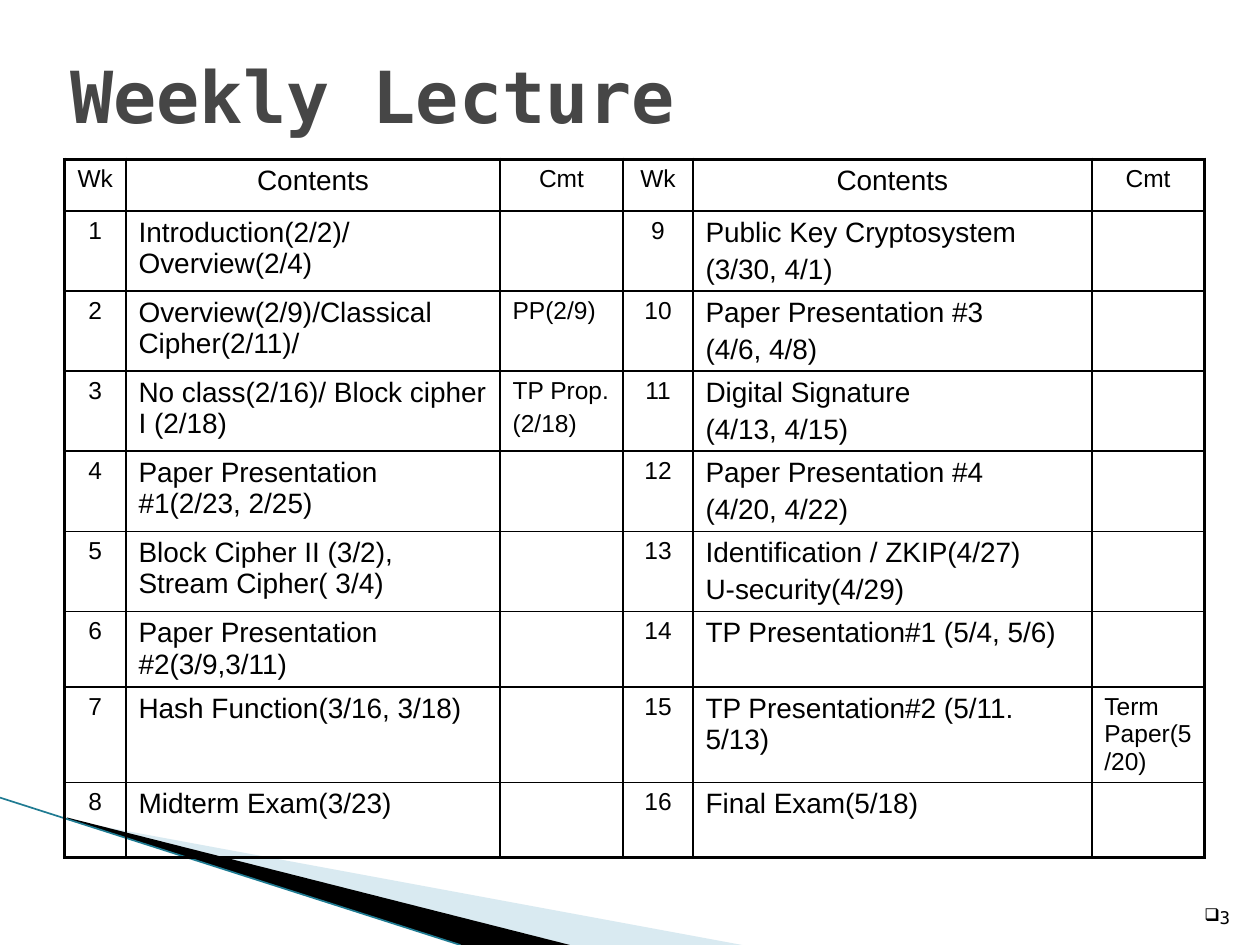
"""Build the weekly lecture schedule slide."""
from dataclasses import dataclass

from lxml.etree import SubElement
from pptx import Presentation
from pptx.dml.color import RGBColor
from pptx.enum.shapes import MSO_CONNECTOR as Connector
from pptx.enum.text import MSO_ANCHOR as Anchor, PP_ALIGN as Align
from pptx.oxml.ns import qn
from pptx.util import Cm, Pt


@dataclass(frozen=True)
class Theme:
    ink: str = "000000"
    heading: str = "464646"
    wedge: str = "A0CBDC"
    stroke: str = "1F7B92"
    body_font: str = "Arial"
    mono_font: str = "DejaVu Sans Mono"
    title_size: int = 41
    content_size: int = 16
    label_size: int = 14
    number_size: int = 10
    outer_border: float = 2.25
    inner_border: float = 1


def format_font(font, color, **values):
    for name, value in values.items():
        setattr(font, name, value)
    font.color.rgb = RGBColor.from_string(color)


def add_label(slide, box, text, anchor, align):
    frame = slide.shapes.add_textbox(*map(Cm, box)).text_frame
    for name, value in {"word_wrap": True, "vertical_anchor": anchor}.items():
        setattr(frame, name, value)
    paragraph = frame.paragraphs[0]
    paragraph.text = text
    paragraph.alignment = align
    return paragraph


theme = Theme()
presentation = Presentation()
presentation.slide_width, presentation.slide_height = Cm(25.4), Cm(19.05)
slide = presentation.slides.add_slide(presentation.slide_layouts[6])

wedges = [
    (theme.wedge, 40, [(1.4, 16.54), (14.96, 19.05), (11.48, 19.05), (1.4, 16.51)]),
    (theme.ink, 100, [(1.35, 16.48), (11.49, 19.05), (9.3, 19.05), (1.37, 16.51)]),
]
for color, opacity, points in wedges:
    start, *others = [(Cm(x), Cm(y)) for x, y in points]
    builder = slide.shapes.build_freeform(*start)
    builder.add_line_segments(others, close=True)
    shape = builder.convert_to_shape()
    shape.shadow.inherit = False
    shape.fill.solid()
    shape.fill.fore_color.rgb = RGBColor.from_string(color)
    shape.line.fill.background()
    color_element = shape.fill._xPr.find(".//" + qn("a:srgbClr"))
    SubElement(color_element, qn("a:alpha"), val=str(opacity * 1000))

edge = slide.shapes.add_connector(Connector.STRAIGHT, 0, Cm(16.08), Cm(9.28), Cm(19.05))
edge.line.color.rgb = RGBColor.from_string(theme.stroke)
edge.line.width = Pt(0.95)
SubElement(edge._element.spPr, qn("a:effectLst"))

title = add_label(slide, (1.17, 0.86, 22.73, 2.11), "Weekly Lecture", Anchor.MIDDLE, Align.LEFT)
format_font(title.runs[0].font, theme.heading, name=theme.mono_font,
            size=Pt(theme.title_size), bold=True)

schedule = [
    ("Wk", "Contents", "Cmt", "Wk", "Contents", "Cmt"),
    ("1", "Introduction(2/2)/Overview(2/4)", "", "9", "Public Key Cryptosystem\n(3/30, 4/1)", ""),
    ("2", "Overview(2/9)/Classical Cipher(2/11)/", "PP(2/9)",
     "10", "Paper Presentation #3\n(4/6, 4/8)", ""),
    ("3", "No class(2/16)/ Block cipher I (2/18)", "TP Prop.\n(2/18)",
     "11", "Digital Signature\n(4/13, 4/15)", ""),
    ("4", "Paper Presentation #1(2/23, 2/25)", "",
     "12", "Paper Presentation #4\n(4/20, 4/22)", ""),
    ("5", "Block Cipher II (3/2), Stream Cipher( 3/4)", "",
     "13", "Identification / ZKIP(4/27)\nU-security(4/29)", ""),
    ("6", "Paper Presentation #2(3/9,3/11)", "", "14", "TP Presentation#1 (5/4, 5/6)", ""),
    ("7", "Hash Function(3/16, 3/18)", "", "15", "TP Presentation#2 (5/11. 5/13)",
     "Term Paper(5/20)"),
    ("8", "Midterm Exam(3/23)", "", "16", "Final Exam(5/18)", ""),
]
column_widths = [1.24, 7.54, 2.48, 1.41, 8.04, 2.27]
row_heights = [1.04] + [1.52] * 8
last_row, last_column = len(row_heights) - 1, len(column_widths) - 1

table = slide.shapes.add_table(
    len(row_heights), len(column_widths), Cm(1.3), Cm(3.21),
    Cm(sum(column_widths)), Cm(sum(row_heights))).table
table.first_row = table.horz_banding = False
for column, width in zip(table.columns, column_widths):
    column.width = Cm(width)
for row, height in zip(table.rows, row_heights):
    row.height = Cm(height)

for row_index, entries in enumerate(schedule):
    for column_index, text in enumerate(entries):
        cell = table.cell(row_index, column_index)
        outer_sides = {
            "L": column_index == 0,
            "R": column_index == last_column,
            "T": row_index == 0,
            "B": row_index == last_row,
        }
        properties = cell._tc.get_or_add_tcPr()
        for side, is_outer in outer_sides.items():
            width = theme.outer_border if is_outer else theme.inner_border
            border = SubElement(properties, qn("a:ln" + side), w=str(Pt(width)))
            SubElement(SubElement(border, qn("a:solidFill")), qn("a:srgbClr"), val=theme.ink)
        cell.fill.background()
        cell.margin_bottom = Cm(0.02)

        cell.text = text
        centered = row_index == 0 or column_index in (0, 3)
        size = theme.content_size if column_index in (1, 4) else theme.label_size
        for index, paragraph in enumerate(cell.text_frame.paragraphs):
            paragraph.alignment = Align.CENTER if centered else Align.LEFT
            if index:
                paragraph.space_before = Pt(0.2 * size)
            for run in paragraph.runs:
                format_font(run.font, theme.ink, name=theme.body_font, size=Pt(size), bold=False)

number = add_label(slide, (24.03, 17.81, 1.02, 1.02), "3", Anchor.BOTTOM, Align.RIGHT)
number_properties = number._p.get_or_add_pPr()
SubElement(number_properties, qn("a:buFont"), typeface="Wingdings")
SubElement(number_properties, qn("a:buChar"), char="q")
format_font(number.runs[0].font, theme.ink, name=theme.mono_font, size=Pt(theme.number_size))

presentation.save("out.pptx")
